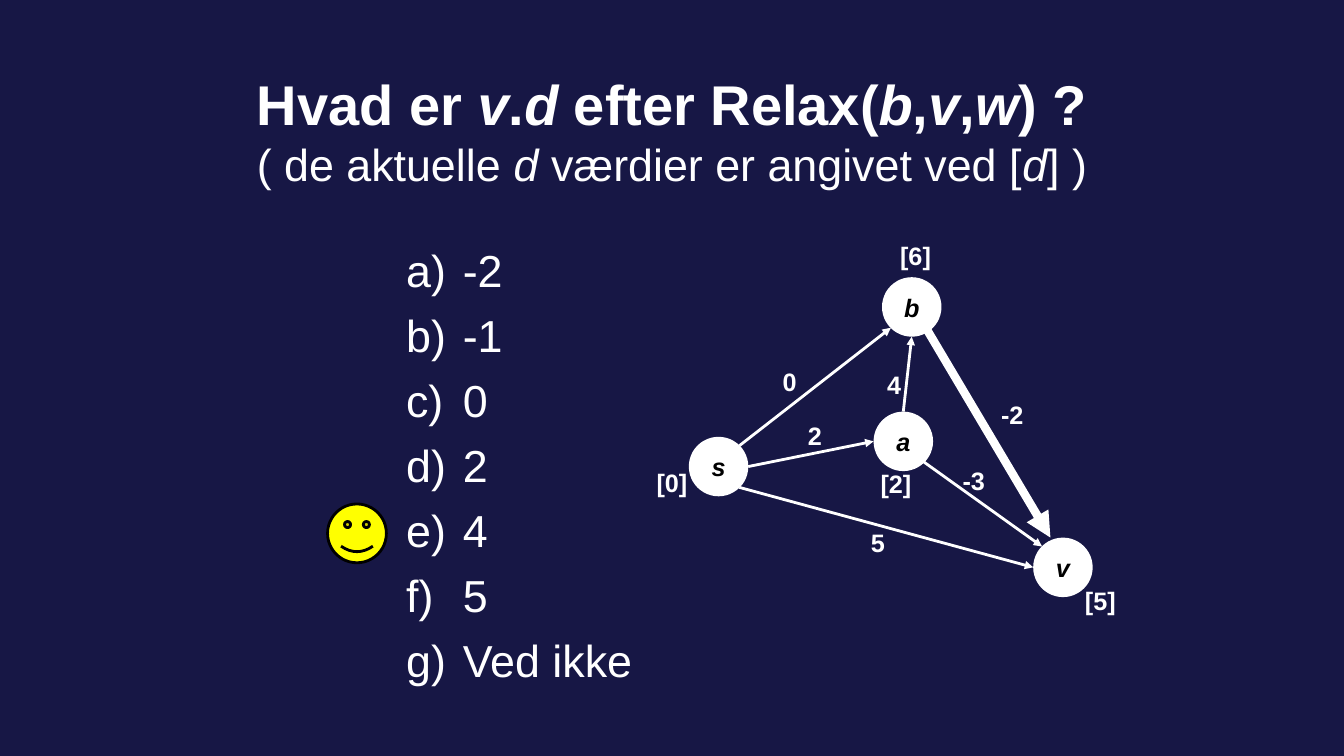
from lxml.etree import SubElement
from pptx import Presentation
from pptx.dml.color import RGBColor
from pptx.enum.shapes import MSO_CONNECTOR, MSO_SHAPE
from pptx.enum.text import MSO_ANCHOR, PP_ALIGN
from pptx.oxml.ns import qn
from pptx.util import Pt

NAVY = RGBColor(0x17, 0x17, 0x45)
WHITE = RGBColor(0xFF, 0xFF, 0xFF)
BLACK = RGBColor(0x00, 0x00, 0x00)
YELLOW = RGBColor(0xFF, 0xFF, 0x00)

NODE_SIZE = 42.5
NODES = {"a": (624, 294), "b": (630, 198), "v": (738, 384), "s": (492, 312)}

# Connection sites as fractions of a node's box
LEFT, RIGHT, TOP, BOTTOM = (0, 0.5), (1, 0.5), (0.5, 0), (0.5, 1)
UPPER_LEFT, UPPER_RIGHT = (0.15, 0.15), (0.85, 0.15)
LOWER_LEFT, LOWER_RIGHT = (0.15, 0.85), (0.85, 0.85)

RELAXED_EDGE = ("b", (0.66, 0.72), "v", (0.29, 0))
EDGES = [
    ("s", LOWER_RIGHT, "v", LEFT),
    ("s", RIGHT, "a", LEFT),
    ("a", LOWER_RIGHT, "v", UPPER_LEFT),
    ("s", UPPER_RIGHT, "b", LOWER_LEFT),
    ("a", TOP, "b", BOTTOM),
]
# Text, left, top, width
WEIGHTS = [
    ("0", 552, 258, 24), ("2", 570, 296.5, 24), ("5", 615, 373, 24),
    ("4", 626.5, 260.5, 24), ("-2", 708, 282, 48), ("-3", 680.5, 328.5, 48),
]
DISTANCES = [
    ("[0]", 444, 330, 54), ("[6]", 618, 168, 54),
    ("[2]", 604, 331, 54), ("[5]", 750, 414.5, 54),
]

# Each title line: size, bold, alternating upright and italic pieces
TITLE_LINES = [
    (40, True, ["Hvad er ", "v", ".", "d", " efter Relax(", "b", ",", "v", ",", "w", ") ?"]),
    (32, False, ["( de aktuelle ", "d ", "værdier er angivet ved [", "d", "] )"]),
]
ANSWERS = ["-2", "-1", "0", "2", "4", "5", "Ved ikke"]


class QuizSlide:
    font_name = "Arial"

    def __init__(self, presentation):
        self.slide = presentation.slides.add_slide(presentation.slide_layouts[6])
        self.slide.background.fill.solid()
        self.slide.background.fill.fore_color.rgb = NAVY

    def format_run(self, run, size, color=WHITE, bold=False, italic=False):
        run.font.name = self.font_name
        run.font.size = Pt(size)
        run.font.color.rgb = color
        run.font.bold = bold
        run.font.italic = italic

    def text_box(self, left, top, width, height):
        shape = self.slide.shapes.add_textbox(Pt(left), Pt(top), Pt(width), Pt(height))
        shape.text_frame.word_wrap = True
        return shape.text_frame

    def title(self, lines):
        text_frame = self.text_box(120, 42, 720, 102)
        text_frame.vertical_anchor = MSO_ANCHOR.MIDDLE
        paragraph = text_frame.paragraphs[0]
        paragraph.alignment = PP_ALIGN.CENTER
        for number, (size, bold, pieces) in enumerate(lines):
            if number:
                paragraph.add_line_break()
            for index, piece in enumerate(pieces):
                run = paragraph.add_run()
                run.text = piece
                self.format_run(run, size, bold=bold, italic=index % 2 == 1)

    def lettered_list(self, answers):
        text_frame = self.text_box(283, 170, 197, 320)
        text_frame.text = "\n".join(answers)
        for paragraph in text_frame.paragraphs:
            paragraph.space_before = Pt(8)
            properties = paragraph._p.get_or_add_pPr()
            properties.set("marL", str(Pt(40.5)))
            properties.set("indent", str(-Pt(40.5)))
            SubElement(properties, qn("a:buFont"), typeface=self.font_name)
            SubElement(properties, qn("a:buAutoNum"), type="alphaLcParenR")
            self.format_run(paragraph.runs[0], 32)

    def label(self, text, left, top, width, alignment):
        text_frame = self.text_box(left, top, width, 29)
        text_frame.text = text
        paragraph = text_frame.paragraphs[0]
        paragraph.alignment = alignment
        self.format_run(paragraph.runs[0], 18, bold=True)

    def preset_shape(self, kind, left, top, size, color):
        shape = self.slide.shapes.add_shape(kind, Pt(left), Pt(top), Pt(size), Pt(size))
        shape.shadow.inherit = False
        shape.fill.solid()
        shape.fill.fore_color.rgb = color
        return shape

    def smiley(self, left, top, size):
        shape = self.preset_shape(MSO_SHAPE.SMILEY_FACE, left, top, size, YELLOW)
        shape.line.color.rgb = BLACK
        shape.line.width = Pt(2)

    def node(self, name):
        shape = self.preset_shape(MSO_SHAPE.OVAL, *NODES[name], NODE_SIZE, WHITE)
        shape.line.fill.background()
        text_frame = shape.text_frame
        text_frame.text = name
        text_frame.vertical_anchor = MSO_ANCHOR.MIDDLE
        paragraph = text_frame.paragraphs[0]
        paragraph.alignment = PP_ALIGN.CENTER
        self.format_run(paragraph.runs[0], 18, BLACK, bold=True, italic=True)

    def edge(self, start, start_site, end, end_site, width=2):
        points = [
            Pt(corner + fraction * NODE_SIZE)
            for name, site in ((start, start_site), (end, end_site))
            for corner, fraction in zip(NODES[name], site)
        ]
        connector = self.slide.shapes.add_connector(MSO_CONNECTOR.STRAIGHT, *points)
        connector.line.color.rgb = WHITE
        connector.line.width = Pt(width)
        SubElement(connector.line._get_or_add_ln(), qn("a:tailEnd"), type="triangle")
        SubElement(connector._element.spPr, qn("a:effectLst"))


def main():
    presentation = Presentation()
    presentation.slide_width = Pt(960)
    presentation.slide_height = Pt(540)

    quiz = QuizSlide(presentation)
    quiz.edge(*RELAXED_EDGE, width=6)
    quiz.title(TITLE_LINES)
    quiz.lettered_list(ANSWERS)
    quiz.smiley(234, 360, 42)
    for name in NODES:
        quiz.node(name)
    for edge in EDGES:
        quiz.edge(*edge)
    for weight in WEIGHTS:
        quiz.label(*weight, PP_ALIGN.LEFT)
    for distance in DISTANCES:
        quiz.label(*distance, PP_ALIGN.RIGHT)

    presentation.save("out.pptx")


if __name__ == "__main__":
    main()
